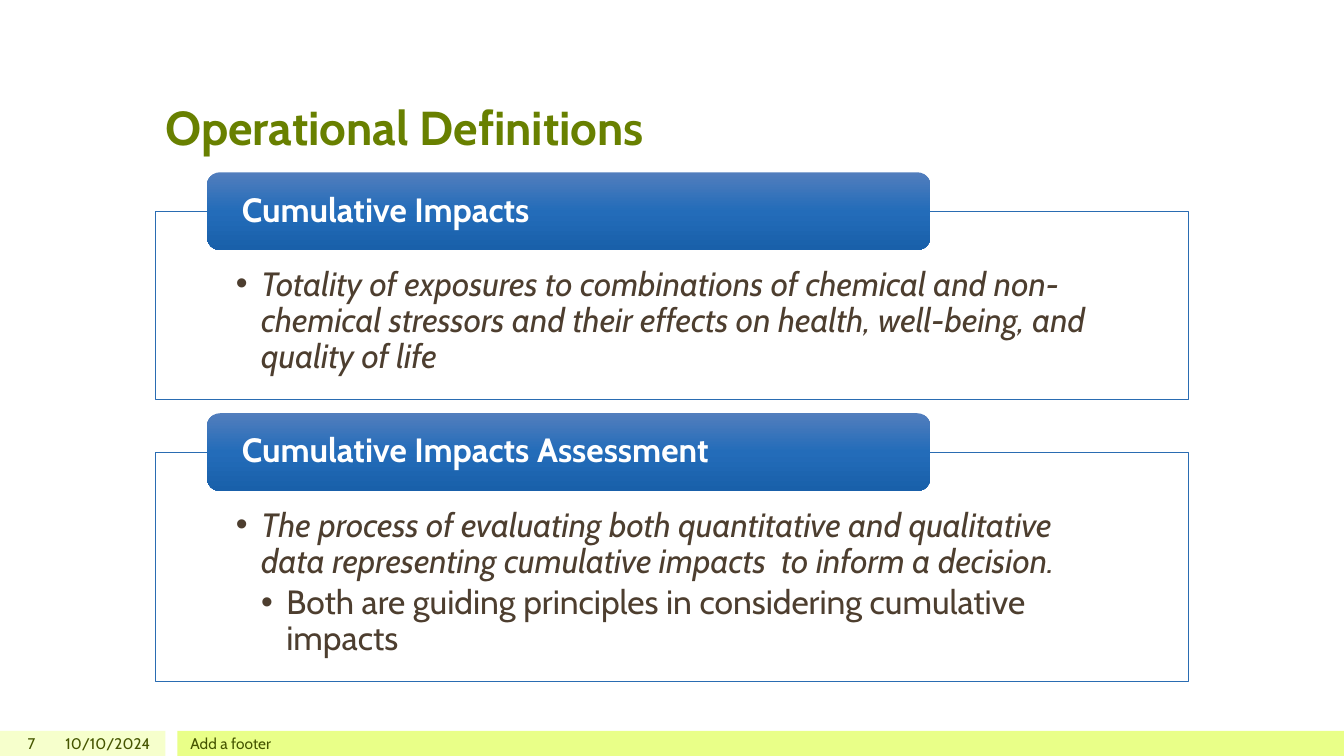
"""Build the Operational Definitions slide with two tabbed definition panels."""
import copy

import pptx
import pptx.dml.color
import pptx.enum.shapes
import pptx.enum.text
import pptx.oxml.ns
import pptx.util
from lxml import etree

RGBColor = pptx.dml.color.RGBColor
Inches = pptx.util.Inches
Pt = pptx.util.Pt
SHAPES = pptx.enum.shapes.MSO_SHAPE
ALIGN = pptx.enum.text.PP_ALIGN
ANCHOR = pptx.enum.text.MSO_ANCHOR
qn = pptx.oxml.ns.qn

TITLE = "Operational Definitions"
PANELS = [
    {"heading": "Cumulative Impacts", "top": 2.1, "height": 1.86, "points": [
        (1, True, "Totality of exposures to combinations of chemical and non-chemical "
                  "stressors and their effects on health, well-being, and quality of life"),
    ]},
    {"heading": "Cumulative Impacts Assessment", "top": 4.49, "height": 2.27, "points": [
        (1, True, "The process of evaluating both quantitative and qualitative data "
                  "representing cumulative impacts  to inform a decision."),
        (2, False, "Both are guiding principles in considering cumulative impacts"),
    ]},
]
FOOTER = [
    ("7", 0, 0.45, ALIGN.RIGHT),
    ("10/10/2024", 0.5, 1.09, ALIGN.RIGHT),
    ("Add a footer", 1.79, 10, ALIGN.LEFT),
]

FONT = "Cabin"
WHITE = RGBColor(0xFF, 0xFF, 0xFF)
OLIVE = RGBColor(0x68, 0x80, 0x00)
DARK_OLIVE = RGBColor(0x45, 0x55, 0x00)
PALE_LIME = RGBColor(0xF6, 0xFF, 0xCC)
LIME = RGBColor(0xE9, 0xFF, 0x88)
BROWN = RGBColor(0x4D, 0x3E, 0x2F)
BLUE = RGBColor(0x2A, 0x6C, 0xB2)
TAB_STOPS = [(0, RGBColor(0x52, 0x7E, 0xBD)), (0.5, RGBColor(0x23, 0x6C, 0xB9)),
             (1, RGBColor(0x19, 0x60, 0xAA))]

SLIDE_WIDTH, SLIDE_HEIGHT = 13.33, 7.5
LEFT, WIDTH = 1.54, 10.25
TAB_LEFT, TAB_WIDTH, TAB_HEIGHT = LEFT + WIDTH * 0.05, WIDTH * 0.7, 0.77
TAB_RISE = 0.39
FOOTER_HEIGHT = 0.25
FOOTER_TOP = SLIDE_HEIGHT - FOOTER_HEIGHT
FOOTER_SPLIT, FOOTER_GAP = 1.64, 0.12
INDENT = 0.25


def format_paragraph(paragraph, size, color, bold=False, italic=False):
    for run in paragraph.runs:
        run.font.name = FONT
        run.font.size = Pt(size)
        run.font.color.rgb = color
        run.font.bold = bold
        run.font.italic = italic


def set_insets(frame, left, top, right, bottom):
    frame.margin_left, frame.margin_top = Inches(left), Inches(top)
    frame.margin_right, frame.margin_bottom = Inches(right), Inches(bottom)


def add_block(slide, kind, left, top, width, height):
    shape = slide.shapes.add_shape(
        kind, Inches(left), Inches(top), Inches(width), Inches(height))
    shape.shadow.inherit = False
    shape.line.fill.background()
    shape.text_frame.word_wrap = True
    return shape


def add_bar(slide, left, width, color):
    bar = add_block(slide, SHAPES.RECTANGLE, left, FOOTER_TOP, width, FOOTER_HEIGHT)
    bar.fill.solid()
    bar.fill.fore_color.rgb = color


def add_footer_text(slide, text, left, width, alignment):
    box = slide.shapes.add_textbox(
        Inches(left), Inches(FOOTER_TOP), Inches(width), Inches(FOOTER_HEIGHT))
    frame = box.text_frame
    frame.word_wrap = True
    frame.vertical_anchor = ANCHOR.MIDDLE
    set_insets(frame, 0.1, 0, 0.1, 0)
    frame.text = text
    frame.paragraphs[0].alignment = alignment
    format_paragraph(frame.paragraphs[0], 11, DARK_OLIVE)


def add_bullet(paragraph, level):
    properties = paragraph._p.get_or_add_pPr()
    properties.set("marL", str(Inches(INDENT * level)))
    properties.set("indent", str(Inches(-INDENT)))
    etree.SubElement(properties, qn("a:buFont")).set("typeface", "Arial")
    etree.SubElement(properties, qn("a:buChar")).set("char", "•")


def add_definition(slide, top, height, points):
    box = add_block(slide, SHAPES.RECTANGLE, LEFT, top, WIDTH, height)
    box.fill.solid()
    box.fill.fore_color.rgb = WHITE
    color = box._element.spPr.find(qn("a:solidFill"))[0]
    etree.SubElement(color, qn("a:alpha")).set("val", "90000")
    box.line.color.rgb = BLUE
    box.line.width = Pt(0.5)
    frame = box.text_frame
    frame.vertical_anchor = ANCHOR.TOP
    set_insets(frame, 0.8, 0.55, 0.8, 0.19)
    for index, (level, italic, text) in enumerate(points):
        paragraph = frame.add_paragraph() if index else frame.paragraphs[0]
        paragraph.text = text
        paragraph.alignment = ALIGN.LEFT
        paragraph.level = level
        paragraph.line_spacing = 0.9
        paragraph.space_after = Pt(3.6)
        add_bullet(paragraph, level)
        format_paragraph(paragraph, 24, BROWN, italic=italic)


def fill_gradient(shape):
    shape.fill.gradient()
    shape.fill.gradient_angle = 270
    stop_list = shape._element.spPr.find(qn("a:gradFill")).find(qn("a:gsLst"))
    stop_list.append(copy.deepcopy(stop_list[-1]))
    for stop, (position, color) in zip(shape.fill.gradient_stops, TAB_STOPS):
        stop.position = position
        stop.color.rgb = color


def add_tab(slide, top, heading):
    tab = add_block(slide, SHAPES.ROUNDED_RECTANGLE, TAB_LEFT, top, TAB_WIDTH, TAB_HEIGHT)
    fill_gradient(tab)
    frame = tab.text_frame
    frame.vertical_anchor = ANCHOR.MIDDLE
    set_insets(frame, 0.31, 0, 0.31, 0)
    frame.text = heading
    paragraph = frame.paragraphs[0]
    paragraph.alignment = ALIGN.LEFT
    paragraph.line_spacing = 0.9
    format_paragraph(paragraph, 24, WHITE, bold=True)


def add_title(slide):
    title = slide.shapes.title
    title.left, title.top = Inches(LEFT), Inches(0.3)
    title.width, title.height = Inches(WIDTH), Inches(1.29)
    frame = title.text_frame
    frame.text = TITLE
    frame.vertical_anchor = ANCHOR.BOTTOM
    frame.paragraphs[0].alignment = ALIGN.LEFT
    format_paragraph(frame.paragraphs[0], 34, OLIVE, bold=True)


def main():
    presentation = pptx.Presentation()
    presentation.slide_width = Inches(SLIDE_WIDTH)
    presentation.slide_height = Inches(SLIDE_HEIGHT)
    slide = presentation.slides.add_slide(presentation.slide_layouts.get_by_name("Title Only"))
    add_title(slide)
    lime_left = FOOTER_SPLIT + FOOTER_GAP
    add_bar(slide, 0, FOOTER_SPLIT, PALE_LIME)
    add_bar(slide, lime_left, SLIDE_WIDTH - lime_left, LIME)
    for entry in FOOTER:
        add_footer_text(slide, *entry)
    for panel in PANELS:
        add_definition(slide, panel["top"], panel["height"], panel["points"])
        add_tab(slide, panel["top"] - TAB_RISE, panel["heading"])
    presentation.save("out.pptx")


if __name__ == "__main__":
    main()
